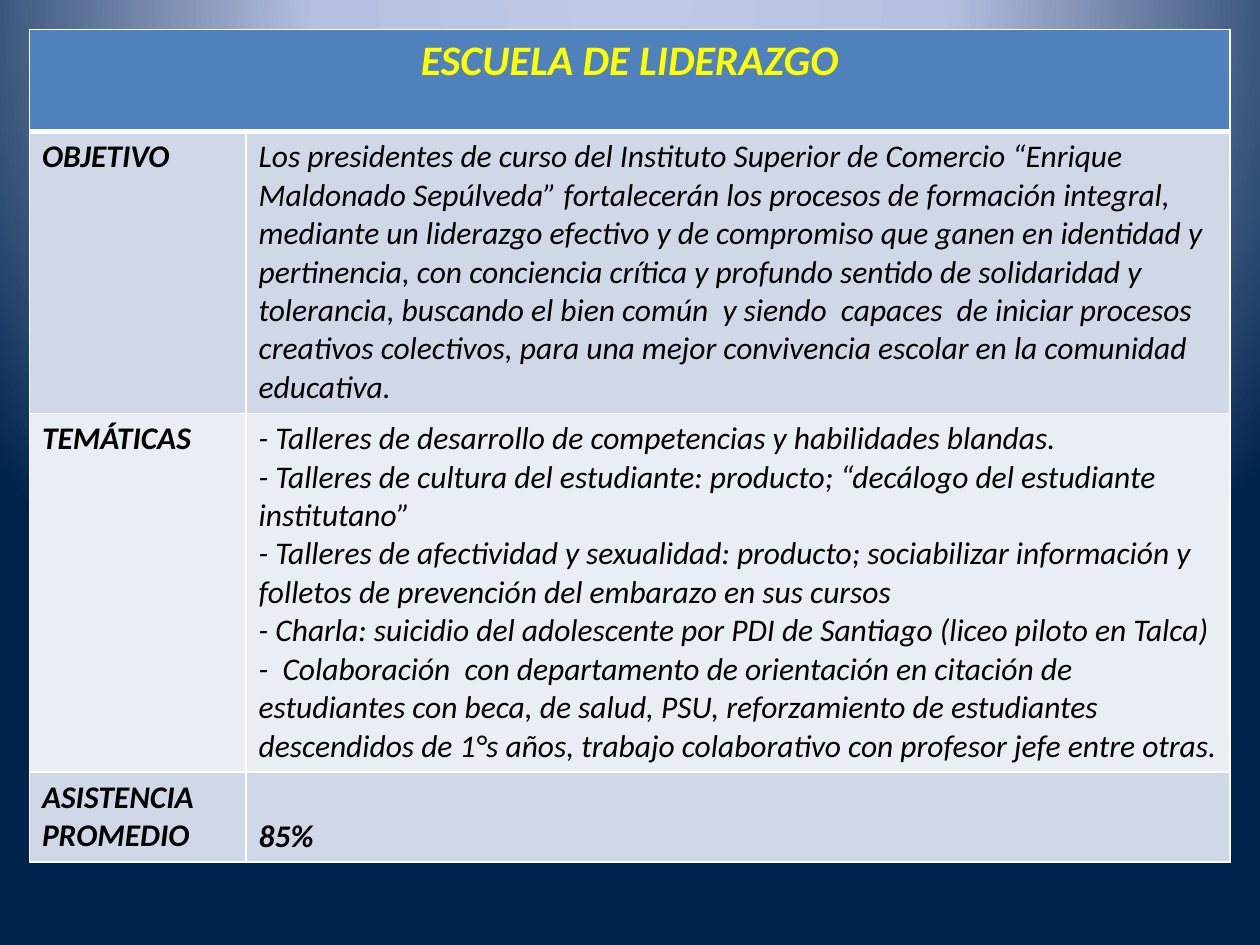
from lxml import etree
from pptx import Presentation
from pptx.dml.color import RGBColor
from pptx.enum.text import MSO_ANCHOR, PP_ALIGN
from pptx.oxml import parse_xml
from pptx.oxml.ns import nsdecls, qn
from pptx.util import Pt

CENTER = PP_ALIGN.CENTER
BOTTOM = MSO_ANCHOR.BOTTOM

WIDTHS = [123.84, 562.32]
HEIGHTS = [58.3, 161.1, 205.1, 51.4]
FILLS = ["4F81BD", "D0D8E8", "E9EDF4", "D0D8E8"]
STOPS = [(0, "BFC9E5"), (40, "B5C0E0"), (100, "00234D")]

TITLE = "ESCUELA DE LIDERAZGO"
LABELS = ["OBJETIVO", "TEMÁTICAS", "ASISTENCIA PROMEDIO"]
GOAL = (
    "Los presidentes de curso del Instituto Superior de Comercio “Enrique "
    "Maldonado Sepúlveda” fortalecerán los procesos de formación integral, "
    "mediante un liderazgo efectivo y de compromiso que ganen en identidad y "
    "pertinencia, con conciencia crítica y profundo sentido de solidaridad y "
    "tolerancia, buscando el bien común  y siendo  capaces  de iniciar procesos "
    "creativos colectivos, para una mejor convivencia escolar en la comunidad "
    "educativa."
)
TOPICS = [
    "- Talleres de desarrollo de competencias y habilidades blandas.",
    "- Talleres de cultura del estudiante: producto; “decálogo del estudiante "
    "institutano”",
    "- Talleres de afectividad y sexualidad: producto; sociabilizar información y "
    "folletos de prevención del embarazo en sus cursos",
    "- Charla: suicidio del adolescente por PDI de Santiago (liceo piloto en Talca)",
    "-  Colaboración  con departamento de orientación en citación de "
    "estudiantes con beca, de salud, PSU, reforzamiento de estudiantes "
    "descendidos de 1°s años, trabajo colaborativo con profesor jefe entre otras.",
]
RATE = "85%"


def color(code):
    return RGBColor.from_string(code)


class Deck:
    font = "Calibri"
    size = 18
    ink = "000000"
    edge = "FFFFFF"

    def __init__(self, wide, high):
        self.prs = Presentation()
        self.prs.slide_width = Pt(wide)
        self.prs.slide_height = Pt(high)
        self.slide = self.prs.slides.add_slide(self.prs.slide_layouts[6])

    def back(self, stops):
        marks = "".join(
            f'<a:gs pos="{pos * 1000}"><a:srgbClr val="{code}"/></a:gs>'
            for pos, code in stops
        )
        node = parse_xml(
            f'<p:bg {nsdecls("p", "a")}><p:bgPr><a:gradFill rotWithShape="1">'
            f'<a:gsLst>{marks}</a:gsLst><a:path path="circle">'
            '<a:fillToRect l="50000" t="-80000" r="50000" b="180000"/>'
            '</a:path></a:gradFill><a:effectLst/></p:bgPr></p:bg>'
        )
        self.slide.element.cSld.insert(0, node)

    def table(self, left, top, widths, heights, fills):
        frame = self.slide.shapes.add_table(
            len(heights), len(widths), Pt(left), Pt(top),
            Pt(sum(widths)), Pt(sum(heights)))
        grid = frame.table
        for col, width in zip(grid.columns, widths):
            col.width = Pt(width)
        for num, (row, high) in enumerate(zip(grid.rows, heights)):
            row.height = Pt(high)
            for cell in row.cells:
                cell.fill.solid()
                cell.fill.fore_color.rgb = color(fills[num])
                self.border(cell, 3 if num == 1 else 1, 3 if num == 0 else 1)
        return grid

    def border(self, cell, top, low):
        props = cell._tc.get_or_add_tcPr()
        sides = [("L", 1), ("R", 1), ("T", top), ("B", low)]
        for spot, (side, width) in enumerate(sides):
            line = etree.Element(qn(f"a:ln{side}"), w=str(Pt(width)))
            fill = etree.SubElement(line, qn("a:solidFill"))
            etree.SubElement(fill, qn("a:srgbClr"), val=self.edge)
            props.insert(spot, line)

    def label(self, cell, lines, bold=False, size=None, ink=None, align=None):
        cell.text = "\n".join(lines)
        for para in cell.text_frame.paragraphs:
            para.alignment = align
            font = para.font
            font.name = self.font
            font.size = Pt(size or self.size)
            font.bold = bold
            font.italic = True
            font.color.rgb = color(ink or self.ink)


def main():
    deck = Deck(720, 540)
    deck.back(STOPS)
    grid = deck.table(16.8, 16.8, WIDTHS, HEIGHTS, FILLS)
    head = grid.cell(0, 0)
    head.merge(grid.cell(0, 1))
    deck.label(head, [TITLE], bold=True, size=24, ink="FFFF00", align=CENTER)
    for row, name in enumerate(LABELS, 1):
        deck.label(grid.cell(row, 0), [name], bold=True)
    deck.label(grid.cell(1, 1), [GOAL])
    deck.label(grid.cell(2, 1), TOPICS)
    rate = grid.cell(3, 1)
    deck.label(rate, [RATE], bold=True)
    rate.vertical_anchor = BOTTOM
    deck.prs.save("out.pptx")


if __name__ == "__main__":
    main()
